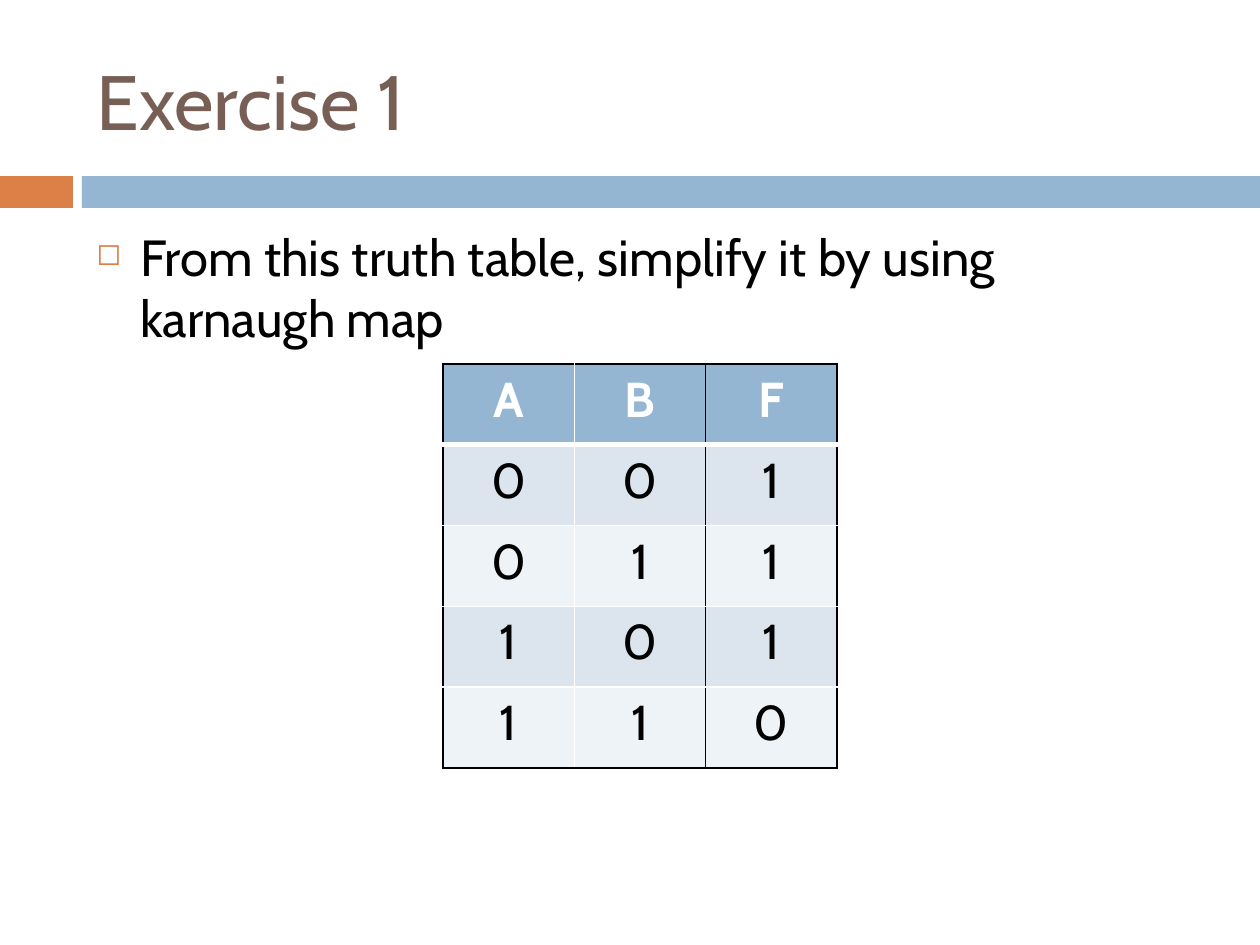
from lxml.etree import SubElement
from pptx import Presentation
from pptx.dml.color import RGBColor
from pptx.enum.shapes import MSO_SHAPE
from pptx.enum.text import MSO_ANCHOR, PP_ALIGN
from pptx.oxml.ns import qn
from pptx.util import Emu, Pt

SCALE = 914400 / 126
FONT = "Cabin"
BLUE, ORANGE, BROWN = "94B6D2", "DD8047", "775F55"
BLACK, WHITE = "000000", "FFFFFF"
BANDS = ["DCE5EE", "EEF3F7"]
ROWS = ["ABF", "001", "011", "101", "110"]


def px(num):
    return Emu(round(num * SCALE))


def tint(code):
    return RGBColor.from_string(code)


def place(shape, box):
    shape.left, shape.top, shape.width, shape.height = map(px, box)


def write(frame, text, size=28, color=BLACK, bold=False,
          align=PP_ALIGN.LEFT, anchor=MSO_ANCHOR.TOP):
    frame.word_wrap = True
    frame.vertical_anchor = anchor
    para = frame.paragraphs[0]
    para.alignment = align
    run = para.add_run()
    run.text = text
    font = run.font
    font.name, font.size, font.bold = FONT, Pt(size), bold
    font.color.rgb = tint(color)
    return para


def add_bar(slide, box, color):
    bar = slide.shapes.add_shape(MSO_SHAPE.RECTANGLE, *map(px, box))
    bar.shadow.inherit = False
    bar.fill.solid()
    bar.fill.fore_color.rgb = tint(color)
    bar.line.fill.background()


def add_band(slide, box):
    left, top, width, height = box
    add_bar(slide, (left, top, 73, height), ORANGE)
    add_bar(slide, (left + 82, top, width - 82, height), BLUE)


def add_title(slide, box):
    title = slide.shapes.title
    place(title, box)
    write(title.text_frame, "Exercise 1", size=44, color=BROWN,
          anchor=MSO_ANCHOR.MIDDLE)


def add_body(slide, box):
    body = slide.shapes.add_textbox(*map(px, box))
    para = write(body.text_frame,
                 "From this truth table, simplify it by using karnaugh map",
                 size=29)
    para.space_before = Pt(7)
    props = para._p.get_or_add_pPr()
    props.set("marL", str(px(44)))
    props.set("indent", str(px(-44)))
    color = SubElement(props, qn("a:buClr"))
    SubElement(color, qn("a:srgbClr"), val=ORANGE)
    SubElement(props, qn("a:buSzPct"), val="60000")
    SubElement(props, qn("a:buChar"), char="◻")


def add_edge(cell, side, color, width=1):
    props = cell._tc.get_or_add_tcPr()
    line = SubElement(props, qn("a:ln" + side), w=str(Pt(width)))
    fill = SubElement(line, qn("a:solidFill"))
    SubElement(fill, qn("a:srgbClr"), val=color)


def add_table(slide, box):
    count, span = len(ROWS), len(ROWS[0])
    table = slide.shapes.add_table(count, span, *map(px, box)).table
    across = [BLACK, WHITE, BLACK, BLACK]
    down = [(BLACK, 1), (WHITE, 3)] + [(WHITE, 1)] * (count - 2) + [(BLACK, 1)]
    for row, marks in enumerate(ROWS):
        head = row == 0
        for col, mark in enumerate(marks):
            cell = table.cell(row, col)
            write(cell.text_frame, mark, color=WHITE if head else BLACK,
                  bold=head, align=PP_ALIGN.CENTER)
            add_edge(cell, "L", across[col])
            add_edge(cell, "R", across[col + 1])
            add_edge(cell, "T", *down[row])
            add_edge(cell, "B", *down[row + 1])
            cell.fill.solid()
            cell.fill.fore_color.rgb = tint(BLUE if head else BANDS[(row - 1) % 2])


def main():
    deck = Presentation()
    deck.slide_width, deck.slide_height = px(1260), px(945)
    slide = deck.slides.add_slide(deck.slide_layouts[5])
    add_band(slide, (0, 176, 1260, 32))
    add_title(slide, (84, 32, 1124, 136))
    add_body(slide, (84, 220, 1124, 620))
    add_table(slide, (443, 364, 394, 404))
    deck.save("out.pptx")


if __name__ == "__main__":
    main()
